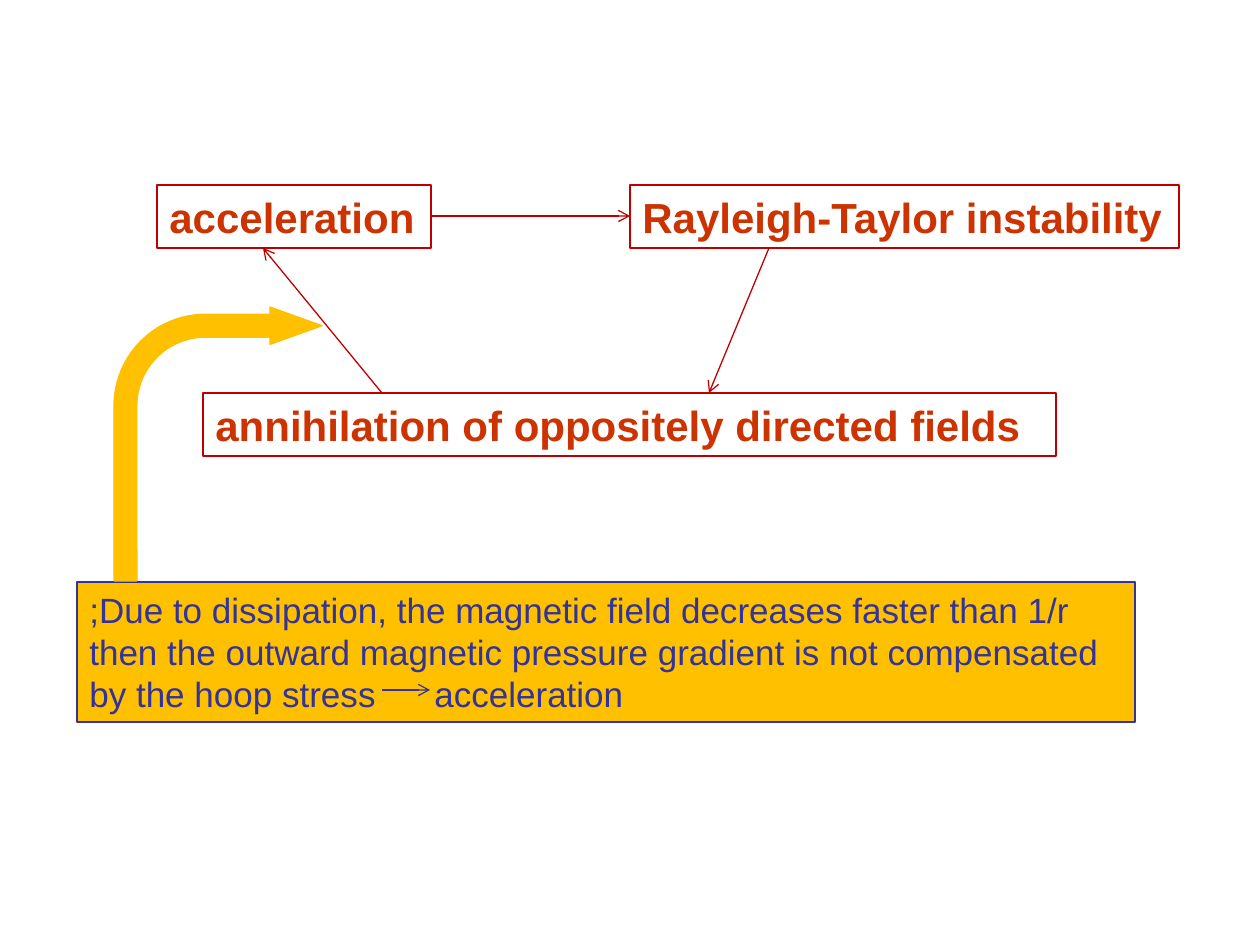
from lxml.etree import SubElement
from pptx import Presentation
from pptx.dml.color import RGBColor
from pptx.enum.shapes import MSO_CONNECTOR, MSO_SHAPE
from pptx.enum.text import MSO_ANCHOR, PP_ALIGN
from pptx.oxml.ns import qn
from pptx.util import Pt

SCALE = 914400 / 126
RED, RUST, BLUE, GOLD = "C00000", "CC3300", "333399", "FFC000"


def px(n):
    return round(n * SCALE)


def color(code):
    return RGBColor.from_string(code)


def add_form(slide, kind, area, edge, fill=None):
    form = slide.shapes.add_shape(kind, *map(px, area))
    form.shadow.inherit = False
    if fill:
        form.fill.solid()
        form.fill.fore_color.rgb = color(fill)
    else:
        form.fill.background()
    form.line.color.rgb = color(edge)
    form.line.width = Pt(0.75)
    return form


def add_box(slide, area, lines, size, ink, edge, fill=None, bold=False):
    frame = add_form(slide, MSO_SHAPE.RECTANGLE, area, edge, fill).text_frame
    frame.word_wrap = True
    frame.vertical_anchor = MSO_ANCHOR.TOP
    frame.text = "\n".join(lines)
    for para in frame.paragraphs:
        para.alignment = PP_ALIGN.LEFT
        para.font.name = "Arial"
        para.font.size = Pt(size)
        para.font.bold = bold
        para.font.color.rgb = color(ink)
    return frame


def add_arrow(slide, start, end, ink):
    arrow = slide.shapes.add_connector(
        MSO_CONNECTOR.STRAIGHT, *map(px, start + end))
    arrow.line.color.rgb = color(ink)
    arrow.line.width = Pt(0.75)
    SubElement(arrow.line._get_or_add_ln(), qn("a:tailEnd"), type="arrow")
    SubElement(arrow._element.spPr, qn("a:effectLst"))


def set_tab(para, pos):
    tabs = SubElement(para._p.get_or_add_pPr(), qn("a:tabLst"))
    SubElement(tabs, qn("a:tab"), pos=str(px(pos)), algn="l")
    props = para._p.pPr
    props.insert(0, tabs)


def add_bend(slide, area, ratios):
    bend = add_form(slide, MSO_SHAPE.BENT_ARROW, area, GOLD, GOLD)
    for i, ratio in enumerate(ratios):
        bend.adjustments[i] = ratio


def main():
    deck = Presentation()
    deck.slide_width, deck.slide_height = px(1260), px(945)
    slide = deck.slides.add_slide(deck.slide_layouts[6])

    for text, area in (
        ("acceleration", (157, 185, 274, 63)),
        ("Rayleigh-Taylor instability", (630, 185, 549, 63)),
        ("annihilation of oppositely directed fields", (203, 393, 853, 63)),
    ):
        add_box(slide, area, [text], 24, RUST, RED, bold=True)

    for start, end in (
        ((430, 216), (630, 216)),
        ((769, 248), (709, 393)),
        ((382, 393), (263, 248)),
    ):
        add_arrow(slide, start, end, RED)

    note = add_box(slide, (77, 582, 1058, 140), [
        ";Due to dissipation, the magnetic field decreases faster than 1/r",
        "then the outward magnetic pressure gradient is not compensated "
        "by the hoop stress\tacceleration",
    ], 20, BLUE, BLUE, GOLD)
    set_tab(note.paragraphs[1], 345)

    add_bend(slide, (114, 307, 208, 274), (0.11, 0.09, 0.25, 0.44))
    add_arrow(slide, (382, 690), (430, 690), BLUE)
    deck.save("out.pptx")


if __name__ == "__main__":
    main()
